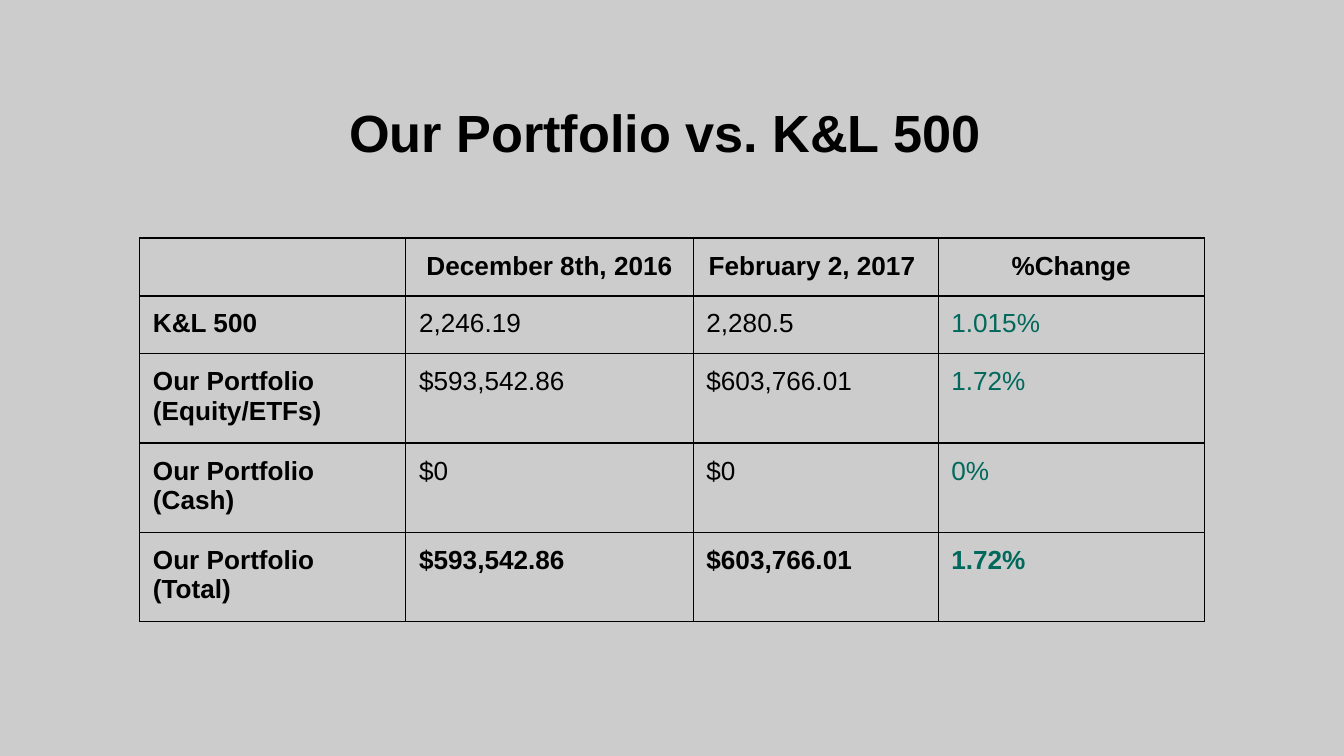
from dataclasses import dataclass

from lxml.etree import SubElement
from pptx import Presentation
from pptx.dml.color import RGBColor
from pptx.enum.text import PP_ALIGN
from pptx.oxml.ns import qn
from pptx.util import Cm, Pt

COLORS = {"background": "CCCCCC", "ink": "000000", "change": "00695C"}
INSET = Cm(0.25)
COL_WIDTHS = (5.03, 5.43, 4.63, 5.03)
HEADERS = ("", "December 8th, 2016", "February 2, 2017 ", "%Change")


@dataclass
class Holding:
    name: str
    start: str
    end: str
    change: str
    height: float = 1.62
    bold: bool = False


HOLDINGS = (
    Holding("K&L 500", "2,246.19", "2,280.5", "1.015%", height=1.06),
    Holding("Our Portfolio (Equity/ETFs)", "$593,542.86", "$603,766.01", "1.72%"),
    Holding("Our Portfolio (Cash)", "$0", "$0", "0%"),
    Holding("Our Portfolio (Total)", "$593,542.86", "$603,766.01", "1.72%", bold=True),
)


def write(tf, text: str, size: float, bold: bool, color: str = "ink", align=PP_ALIGN.LEFT) -> None:
    """Put one styled paragraph in a text frame."""
    tf.word_wrap = True
    p = tf.paragraphs[0]
    p.text = text
    p.alignment = align
    p.font.name = "Arial"
    p.font.size = Pt(size)
    p.font.bold = bold
    p.font.color.rgb = RGBColor.from_string(COLORS[color])


def set_margins(box) -> None:
    """Give a cell or text frame equal margins."""
    box.margin_left = box.margin_right = box.margin_top = box.margin_bottom = INSET


def style_cell(cell) -> None:
    """Draw a thin border on all sides of a cell without fill."""
    set_margins(cell)
    tcPr = cell._tc.get_or_add_tcPr()
    for side in ("a:lnL", "a:lnR", "a:lnT", "a:lnB"):
        ln = SubElement(tcPr, qn(side), w=str(Pt(0.75)))
        fill = SubElement(ln, qn("a:solidFill"))
        SubElement(fill, qn("a:srgbClr"), val=COLORS["ink"])
    cell.fill.background()


def add_title(s, text: str) -> None:
    """Add the centred slide title."""
    tf = s.shapes.add_textbox(Cm(0.87), Cm(1.65), Cm(23.67), Cm(1.6)).text_frame
    set_margins(tf)
    write(tf, text, 28, True, align=PP_ALIGN.CENTER)


def add_holdings(s) -> None:
    """Add the table of holdings."""
    heights = [1.06] + [h.height for h in HOLDINGS]
    table = s.shapes.add_table(
        len(heights), len(COL_WIDTHS), Cm(2.64), Cm(4.5), Cm(sum(COL_WIDTHS)), Cm(sum(heights))
    ).table
    table.first_row = table.horz_banding = False
    for column, width in zip(table.columns, COL_WIDTHS):
        column.width = Cm(width)
    for row, height in zip(table.rows, heights):
        row.height = Cm(height)
    for cell in table.iter_cells():
        style_cell(cell)
    for c, header in enumerate(HEADERS):
        write(table.cell(0, c).text_frame, header, 14, True, align=PP_ALIGN.CENTER)
    for r, h in enumerate(HOLDINGS, 1):
        for c, text in enumerate((h.name, h.start, h.end, h.change)):
            color = "change" if c == 3 else "ink"
            write(table.cell(r, c).text_frame, text, 14, h.bold or c == 0, color)


def main() -> None:
    """Build and save the slide."""
    prs = Presentation()
    prs.slide_width, prs.slide_height = Cm(25.4), Cm(14.29)
    s = prs.slides.add_slide(prs.slide_layouts[6])
    s.background.fill.solid()
    s.background.fill.fore_color.rgb = RGBColor.from_string(COLORS["background"])
    add_title(s, "Our Portfolio vs. K&L 500 ")
    add_holdings(s)
    prs.save("out.pptx")


if __name__ == "__main__":
    main()
